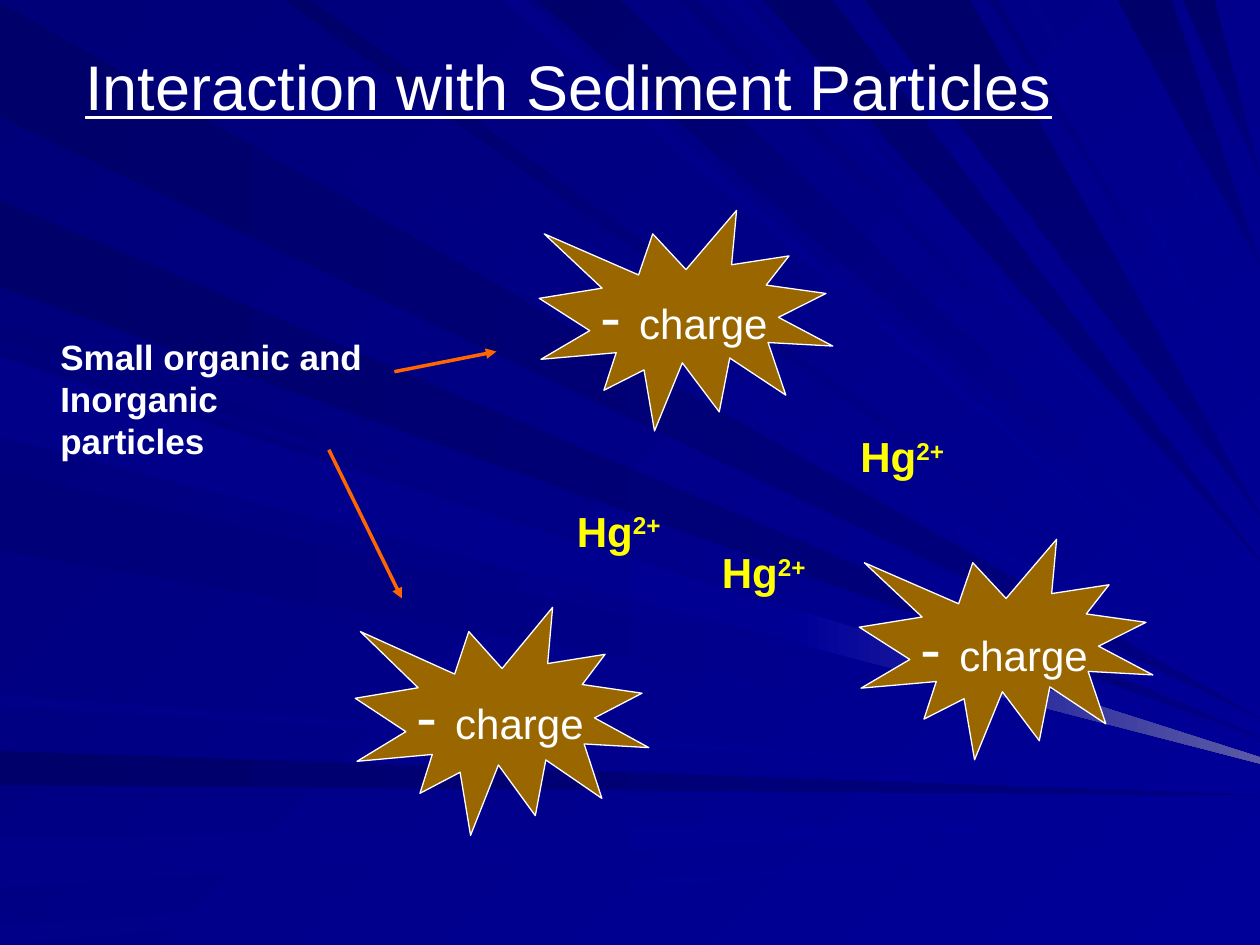
from lxml import etree
from pptx import Presentation
from pptx.dml.color import RGBColor
from pptx.enum.shapes import MSO_CONNECTOR, MSO_SHAPE
from pptx.enum.text import MSO_ANCHOR, PP_ALIGN
from pptx.oxml.ns import qn
from pptx.util import Inches, Pt

STRAIGHT = MSO_CONNECTOR.STRAIGHT
SEAL = MSO_SHAPE.EXPLOSION1
MIDDLE = MSO_ANCHOR.MIDDLE
LEFT, CENTER = PP_ALIGN.LEFT, PP_ALIGN.CENTER

FONT = "Arial"
WHITE = RGBColor(0xFF, 0xFF, 0xFF)
YELLOW = RGBColor(0xFF, 0xFF, 0x00)
BROWN = RGBColor(0x99, 0x66, 0x00)
ORANGE = RGBColor(0xFF, 0x66, 0x00)
MIDNIGHT = RGBColor(0x00, 0x00, 0x6B)
INDIGO = RGBColor(0x00, 0x00, 0x78)
NAVY = RGBColor(0x00, 0x00, 0x80)
ROYAL = RGBColor(0x00, 0x00, 0x88)
BLUE = RGBColor(0x00, 0x00, 0x99)
HAZE = RGBColor(0x5A, 0x5A, 0xA6)

DEEP, WIDE = (MIDNIGHT, NAVY), (MIDNIGHT, BLUE)
SOFT, PALE = (INDIGO, BLUE), (ROYAL, BLUE)

LEFT_RAYS = [
    (DEEP, 0.02, 0.93, 5.7),
    (DEEP, 5.96, 6.23, 6.31),
    (PALE, 6.65, 7.04, 6.47),
    (PALE, 7.35, 7.5, 6.62),
    (SOFT, 2.58, 2.7, 5.89),
    (DEEP, 1.59, 2.28, 5.85),
    (SOFT, 2.78, 3.42, 5.99),
    (SOFT, 3.74, 4.37, 6.06),
    (PALE, 5.52, 5.6, 6.22),
    (PALE, 2.83, 3.47, 6.04),
]
TOP_RAYS = [
    (SOFT, 0.26, 1.01, 5.63),
    (PALE, 3.98, 4.16, 5.18),
    (WIDE, 4.26, 4.92, 4.93),
    (SOFT, 5.4, 5.52, 4.63),
    (DEEP, 6.06, 6.61, 4.45),
    (DEEP, 8.87, 9.3, 2.1),
    (DEEP, 9.39, 9.64, 1.4),
    (WIDE, 2.25, 2.47, 5.5),
    (PALE, 5.77, 5.88, 4.53),
    (DEEP, 6.86, 7.7, 4.09),
    (SOFT, 7.85, 7.92, 3.57),
    (PALE, 8.15, 8.24, 3.36),
    (PALE, 8.65, 8.72, 2.53),
]
GLINT = [(6.37, 4.85), (6.33, 5.11), (10, 6.06), (10, 6.01)]


def paint(fill, colors, angle):
    """Fill with a gradient turned clockwise by the angle."""
    fill.gradient()
    fill.gradient_angle = -angle % 360
    for stop, color in zip(fill.gradient_stops, colors):
        stop.color.rgb = color


def add_ray(page, points, colors, angle):
    """Add one ray with the given corners."""
    corners = [(Inches(x), Inches(y)) for x, y in points]
    builder = page.shapes.build_freeform(*corners[0])
    builder.add_line_segments(corners[1:], close=True)
    ray = builder.convert_to_shape()
    ray.shadow.inherit = False
    ray.line.fill.background()
    paint(ray.fill, colors, angle)


def draw_backdrop(page):
    """Paint the background and the rays that narrow to the right edge."""
    paint(page.background.fill, SOFT, 45)
    for colors, first, last, target in LEFT_RAYS:
        add_ray(page, [(0, first), (0, last), (10, target)], colors, 0)
    for colors, first, last, target in TOP_RAYS:
        angle = 90 if colors == DEEP else 45
        add_ray(page, [(first, 0), (last, 0), (10, target)], colors, angle)
    add_ray(page, GLINT, (BLUE, HAZE), 0)


def write(para, spans, color, align=LEFT):
    """Add (text, size) spans to a paragraph and return their runs."""
    para.alignment = align
    runs = []
    for text, size in spans:
        span = para.add_run()
        span.text = text
        span.font.name = FONT
        span.font.size = Pt(size)
        span.font.color.rgb = color
        runs.append(span)
    return runs


def add_text_frame(page, area, wrap):
    """Add a text box over the area and return its text frame."""
    frame = page.shapes.add_textbox(*map(Inches, area)).text_frame
    frame.word_wrap = wrap
    return frame


def add_title(page, area):
    """Add the underlined title."""
    para = add_text_frame(page, area, False).paragraphs[0]
    for span in write(para, [("Interaction with Sediment Particles", 36)], WHITE):
        span.font.underline = True


def add_particle(page, area, label_area=None):
    """Add a charged particle, labelled inside or in a box of its own."""
    seal = page.shapes.add_shape(SEAL, *map(Inches, area))
    seal.shadow.inherit = False
    seal.fill.solid()
    seal.fill.fore_color.rgb = BROWN
    seal.line.color.rgb = WHITE
    seal.line.width = Pt(0.75)
    if label_area:
        frame, align = add_text_frame(page, label_area, False), LEFT
    else:
        frame, align = seal.text_frame, CENTER
        frame.word_wrap = False
        frame.vertical_anchor = MIDDLE
    write(frame.paragraphs[0], [("- ", 36), ("charge", 24)], WHITE, align)


def add_ion(page, area):
    """Add a mercury ion with its raised charge."""
    para = add_text_frame(page, area, True).paragraphs[0]
    runs = write(para, [("Hg", 24), ("2+", 24)], YELLOW)
    for span in runs:
        span.font.bold = True
    runs[1].font._element.set("baseline", "30000")


def add_caption(page, area):
    """Add the caption that names the particles."""
    frame = add_text_frame(page, area, True)
    paras = [frame.paragraphs[0], frame.add_paragraph()]
    for para, text in zip(paras, ("Small organic and", "Inorganic particles")):
        for span in write(para, [(text, 20)], WHITE):
            span.font.bold = True


def add_arrow(page, start, end):
    """Add an arrow from the caption to a particle."""
    arrow = page.shapes.add_connector(STRAIGHT, *map(Inches, start + end))
    arrow.line.color.rgb = ORANGE
    arrow.line.width = Pt(2)
    etree.SubElement(arrow.line._get_or_add_ln(), qn("a:tailEnd"), type="triangle")
    etree.SubElement(arrow._element.spPr, qn("a:effectLst"))


def main():
    """Build the slide and save it."""
    deck = Presentation()
    deck.slide_width, deck.slide_height = Inches(10), Inches(7.5)
    page = deck.slides.add_slide(deck.slide_layouts[6])
    draw_backdrop(page)
    add_title(page, (0.58, 0.33, 7.94, 0.71))
    add_particle(page, (4.28, 1.67, 2.33, 1.75))
    add_particle(page, (2.82, 4.82, 2.33, 1.81))
    add_particle(page, (6.82, 4.28, 2.33, 1.75), (7.21, 4.78, 1.53, 0.7))
    add_caption(page, (0.38, 2.61, 2.62, 0.77))
    add_arrow(page, (3.13, 2.95), (3.94, 2.79))
    add_arrow(page, (2.61, 3.57), (3.19, 4.75))
    for left, top in ((4.48, 3.96), (6.73, 3.37), (5.63, 4.29)):
        add_ion(page, (left, top, 0.91, 0.5))
    deck.save("out.pptx")


if __name__ == "__main__":
    main()
